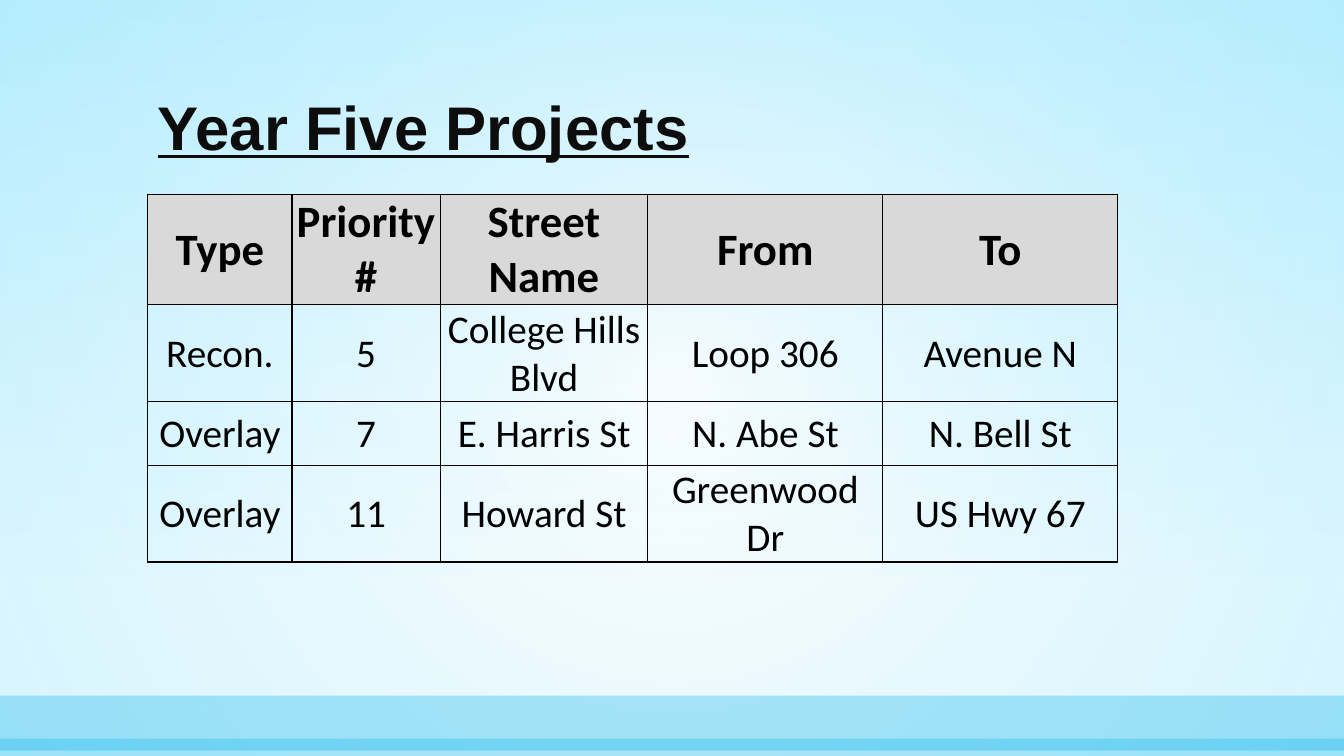
from lxml import etree
from pptx import Presentation
from pptx.dml.color import RGBColor
from pptx.enum.shapes import MSO_SHAPE
from pptx.enum.text import MSO_ANCHOR, MSO_AUTO_SIZE, PP_ALIGN
from pptx.oxml.ns import qn
from pptx.util import Inches, Pt

RECTANGLE = MSO_SHAPE.RECTANGLE
MIDDLE, BOTTOM = MSO_ANCHOR.MIDDLE, MSO_ANCHOR.BOTTOM
LEFT, CENTER = PP_ALIGN.LEFT, PP_ALIGN.CENTER
NO_AUTOFIT = MSO_AUTO_SIZE.NONE

WIDTH, HEIGHT = Inches(13.33), Inches(7.5)
TITLE_ONLY = 5

PROJECTS = [
    ["Type", "Priority #", "Street Name", "From", "To"],
    ["Recon.", "5", "College Hills Blvd", "Loop 306", "Avenue N"],
    ["Overlay", "7", "E. Harris St", "N. Abe St", "N. Bell St"],
    ["Overlay", "11", "Howard St", "Greenwood Dr", "US Hwy 67"],
]


def color(hex_value):
    return RGBColor.from_string(hex_value)


def set_opacity(color_element, percent):
    etree.SubElement(color_element, qn("a:alpha"), val=str(percent * 1000))


def write(frame, text, font="Calibri", size=28, ink="000000", bold=False,
          underline=False, align=CENTER, spacing=1.0):
    paragraph = frame.paragraphs[0]
    paragraph.alignment = align
    paragraph.line_spacing = spacing
    run = paragraph.add_run()
    run.text = text
    run.font.name, run.font.size = font, Pt(size)
    run.font.bold, run.font.underline = bold, underline
    run.font.color.rgb = color(ink)


class ProjectSlide:
    accent, header_fill, border = "00B0EA", "D9D9D9", "000000"
    left = 0.11  # shared left edge of title and table

    def __init__(self, deck):
        self.slide = deck.slides.add_slide(deck.slide_layouts[TITLE_ONLY])

    def box(self, x, y, w, h):
        """Turn shares of the slide's size into lengths."""
        return int(x * WIDTH), int(y * HEIGHT), int(w * WIDTH), int(h * HEIGHT)

    def gradient(self, fill, stops):
        fill.gradient()
        for stop, (position, hex_value) in zip(fill.gradient_stops, stops):
            stop.position, stop.color.rgb = position, color(hex_value)

    def background(self):
        fill = self.slide.background.fill
        self.gradient(fill, [(0, "C8F1FF"), (0.79, "FFFFFF")])
        fill.gradient_angle = 270

    def rectangle(self, *shares):
        shape = self.slide.shapes.add_shape(RECTANGLE, *self.box(*shares))
        shape.shadow.inherit = False
        shape.line.fill.background()
        return shape

    def glow(self):
        shape = self.rectangle(0, 0, 1, 1)
        self.gradient(shape.fill, [(0, "FFFFFF"), (1, "91E4FF")])
        grad = shape._element.spPr.find(qn("a:gradFill"))
        for tint, percent in zip(grad.iter(qn("a:srgbClr")), (49, 35)):
            set_opacity(tint, percent)
        # Radiate from the centre instead of along a line
        grad.remove(grad.find(qn("a:lin")))
        circle = etree.SubElement(grad, qn("a:path"), path="circle")
        etree.SubElement(circle, qn("a:fillToRect"),
                         dict.fromkeys("ltrb", "50000"))

    def band(self, top, height, opacity):
        shape = self.rectangle(0, top, 1, height)
        shape.fill.solid()
        shape.fill.fore_color.rgb = color(self.accent)
        set_opacity(next(shape._element.spPr.iter(qn("a:srgbClr"))), opacity)

    def title(self, text):
        heading = self.slide.shapes.title
        (heading.left, heading.top,
         heading.width, heading.height) = self.box(self.left, 0.064, 0.78, 0.159)
        frame = heading.text_frame
        frame.word_wrap, frame.auto_size = True, NO_AUTOFIT
        frame.vertical_anchor = BOTTOM
        write(frame, text, font="Arial", size=44, ink="0D0D0D", bold=True,
              underline=True, align=LEFT, spacing=0.9)
        # Bring the title in front of the backdrop
        self.slide.shapes._spTree.append(heading._element)

    def outline(self, cell):
        properties = cell._tc.get_or_add_tcPr()
        for index, side in enumerate(("lnL", "lnR", "lnT", "lnB")):
            edge = etree.Element(qn(f"a:{side}"), w=str(Pt(1)))
            solid = etree.SubElement(edge, qn("a:solidFill"))
            etree.SubElement(solid, qn("a:srgbClr"), val=self.border)
            properties.insert(index, edge)

    def table(self, rows, widths, row_height):
        place = self.box(self.left, 0.257, 0.72, row_height * len(rows))
        grid = self.slide.shapes.add_table(len(rows), len(widths), *place).table
        grid.horz_banding = False
        for column, width in zip(grid.columns, widths):
            column.width = Inches(width)
        for r, row in enumerate(rows):
            header = r == 0
            for c, text in enumerate(row):
                cell = grid.cell(r, c)
                cell.margin_left = cell.margin_right = Inches(0.01)
                cell.margin_top, cell.margin_bottom = Inches(0.01), 0
                cell.vertical_anchor = MIDDLE
                if header:
                    cell.fill.solid()
                    cell.fill.fore_color.rgb = color(self.header_fill)
                else:
                    cell.fill.background()
                self.outline(cell)
                write(cell.text_frame, text, size=32 if header else 28,
                      bold=header)


def main():
    deck = Presentation()
    deck.slide_width, deck.slide_height = WIDTH, HEIGHT
    page = ProjectSlide(deck)

    # Backdrop
    page.background()
    page.glow()
    page.band(top=0.92, height=0.073, opacity=30)
    page.band(top=0.977, height=0.023, opacity=28)

    # Content
    page.title("Year Five Projects")
    page.table(PROJECTS, widths=[1.43, 1.47, 2.06, 2.33, 2.33],
               row_height=0.084)

    deck.save("out.pptx")


if __name__ == "__main__":
    main()
